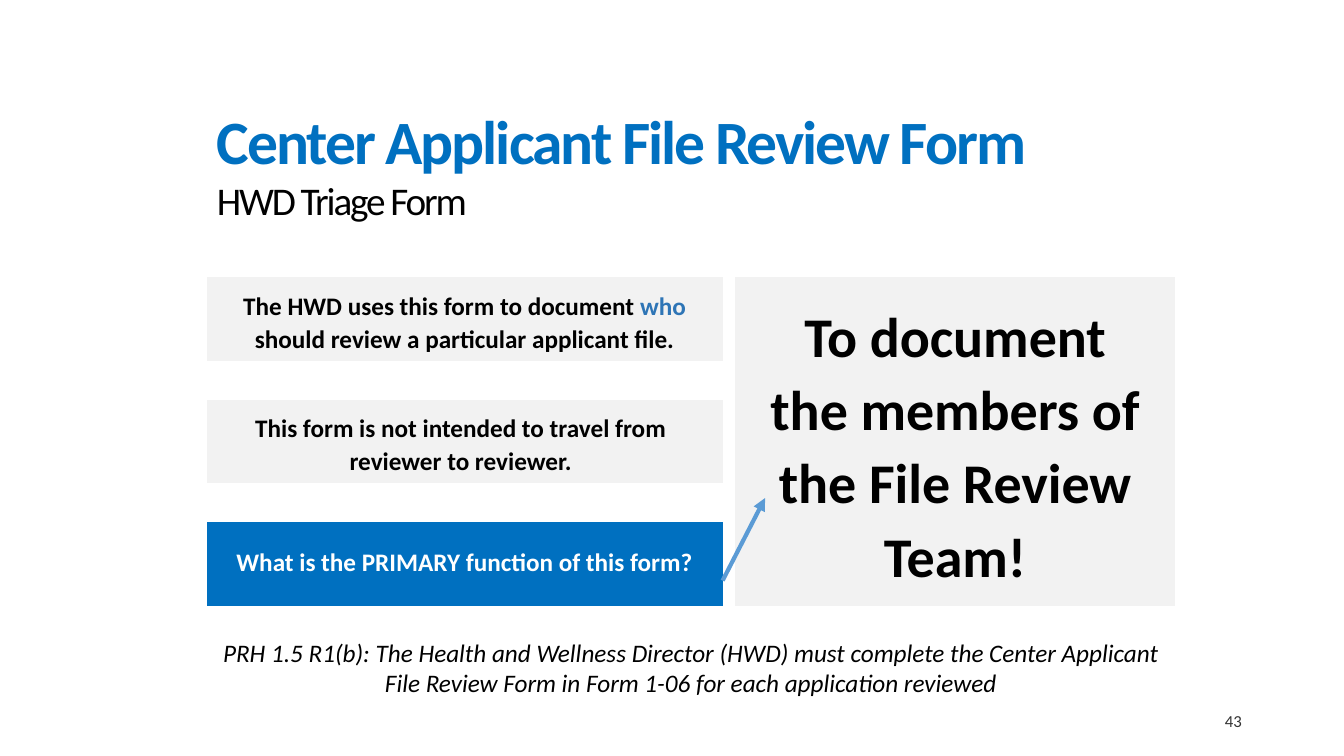
"""Build the HWD triage form slide with its cards, answer panel and arrow."""
import dataclasses

import lxml.etree
import pptx
import pptx.dml.color
import pptx.enum.shapes
import pptx.enum.text
import pptx.oxml.ns
import pptx.util

Cm, Pt = pptx.util.Cm, pptx.util.Pt
RGB = pptx.dml.color.RGBColor.from_string
ALIGN = pptx.enum.text.PP_ALIGN
ANCHOR = pptx.enum.text.MSO_ANCHOR
SHAPE = pptx.enum.shapes.MSO_SHAPE
qn = pptx.oxml.ns.qn


@dataclasses.dataclass(frozen=True)
class Theme:
    font: str = "Calibri"
    blue: str = "0070C0"
    link: str = "2E75B6"
    arrow: str = "5B9BD5"
    pale: str = "F2F2F2"
    ink: str = "000000"
    gray: str = "333333"
    white: str = "FFFFFF"
    title: int = 44
    sub: int = 28
    answer: int = 40
    body: int = 18
    small: int = 12


T = Theme()

TITLE = [
    ("Center Applicant File Review Form", T.title, T.blue, True),
    ("HWD Triage Form", T.sub, T.ink, False),
]
CARDS = [
    (T.pale, 0.3, 0.13, 1.9, [
        ("The HWD uses this form to document ", T.ink),
        ("who", T.link),
        (" should review a particular applicant file.", T.ink),
    ]),
    (T.pale, 0.2, 0.13, 1.9, [
        ("This form is not intended to travel from reviewer to reviewer.", T.ink),
    ]),
    (T.blue, 0.3, 0.42, 1.07, [
        ("What is the PRIMARY function of this form?", T.white),
    ]),
]
ANSWER = "To document the members of the File Review Team!"
NOTE = (
    "PRH 1.5 R1(b): The Health and Wellness Director (HWD) must complete "
    "the Center Applicant File Review Form in Form 1-06 for each "
    "application reviewed"
)
NUMBER = "43"

LEFT, TOP, RIGHT = 5.21, 6.99, 29.62
CARD_W, CARD_H, STEP = 13.0, 2.11, 3.08
PANEL_X = 18.52
PANEL_H = 2 * STEP + CARD_H
PAD_X, PAD_Y = 0.4, 0.33


def add_run(para, text, size, color, bold=False, italic=False):
    run = para.add_run()
    run.text = text
    font = run.font
    font.name, font.size = T.font, Pt(size)
    font.bold, font.italic = bold, italic
    font.color.rgb = RGB(color)
    return run


def add_text(shapes, x, y, w, h, align=ALIGN.CENTER, anchor=ANCHOR.TOP):
    frame = shapes.add_textbox(Cm(x), Cm(y), Cm(w), Cm(h)).text_frame
    frame.word_wrap = True
    frame.vertical_anchor = anchor
    para = frame.paragraphs[0]
    para.alignment = align
    return para


def add_lead(shapes, x, y, w, h, runs, size):
    para = add_text(shapes, x, y, w, h)
    para.line_spacing, para.space_before = 1.09, Pt(6)
    for text, color in runs:
        add_run(para, text, size, color, bold=True)


def add_panel(shapes, x, y, w, h, color):
    panel = shapes.add_shape(SHAPE.PARALLELOGRAM, Cm(x), Cm(y), Cm(w), Cm(h))
    panel.adjustments[0] = 0
    panel.shadow.inherit = False
    panel.fill.solid()
    panel.fill.fore_color.rgb = RGB(color)
    panel.line.fill.background()


def add_title(slide):
    title = slide.shapes.title
    title.left, title.top = Cm(LEFT), Cm(2.46)
    title.width, title.height = Cm(21.34), Cm(3.33)
    frame = title.text_frame
    frame.word_wrap = True
    frame.auto_size = pptx.enum.text.MSO_AUTO_SIZE.NONE
    frame.vertical_anchor = ANCHOR.TOP
    for i, (text, size, color, bold) in enumerate(TITLE):
        para = frame.add_paragraph() if i else frame.paragraphs[0]
        para.alignment = ALIGN.LEFT
        run = add_run(para, text, size, color, bold)
        run.font._element.set("spc", "-150")


def add_arrow(shapes, x1, y1, x2, y2):
    kind = pptx.enum.shapes.MSO_CONNECTOR.STRAIGHT
    arrow = shapes.add_connector(kind, Cm(x1), Cm(y1), Cm(x2), Cm(y2))
    arrow.line.color.rgb = RGB(T.arrow)
    arrow.line.width = Pt(3)
    line = arrow.line._get_or_add_ln()
    lxml.etree.SubElement(line, qn("a:tailEnd"), type="triangle")
    lxml.etree.SubElement(arrow._element.spPr, qn("a:effectLst"))


def main():
    deck = pptx.Presentation()
    deck.slide_width, deck.slide_height = Cm(33.87), Cm(19.05)
    slide = deck.slides.add_slide(deck.slide_layouts[5])
    shapes = slide.shapes
    add_title(slide)

    for i, (fill, dx, dy, h, runs) in enumerate(CARDS):
        y = TOP + i * STEP
        add_panel(shapes, LEFT, y, CARD_W, CARD_H, fill)
        add_lead(shapes, LEFT + dx, y + dy, 12.4, h, runs, T.body)

    group = shapes.add_group_shape().shapes
    width = RIGHT - PANEL_X
    add_panel(group, PANEL_X, TOP, width, PANEL_H, T.pale)
    add_lead(group, PANEL_X + PAD_X, TOP + PAD_Y, width - 2 * PAD_X,
             PANEL_H - 2 * PAD_Y, [(ANSWER, T.ink)], T.answer)

    note = add_text(shapes, LEFT, 15.93, RIGHT - LEFT, 1.8)
    add_run(note, NOTE, T.body, T.ink, italic=True)
    add_arrow(shapes, LEFT + CARD_W, 14.63, 19.28, 12.55)
    number = add_text(shapes, 23.93, 17.65, 7.62, 1.02,
                      ALIGN.RIGHT, ANCHOR.MIDDLE)
    number.space_after = Pt(6)
    add_run(number, NUMBER, T.small, T.gray)
    deck.save("out.pptx")


if __name__ == "__main__":
    main()
